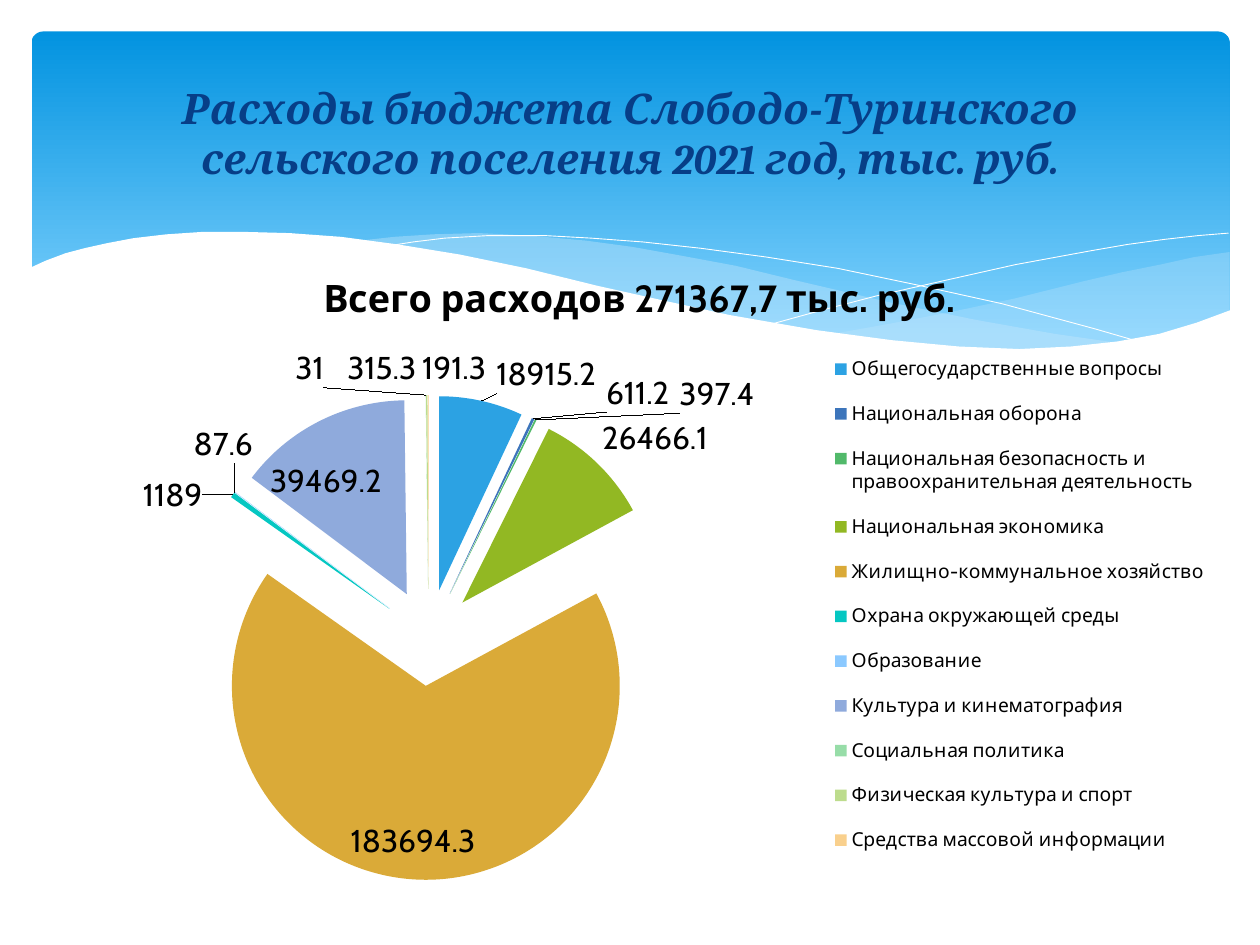
from lxml.etree import SubElement
from pptx import Presentation
from pptx.chart.data import CategoryChartData
from pptx.dml.color import RGBColor
from pptx.enum.chart import XL_CHART_TYPE, XL_LABEL_POSITION, XL_LEGEND_POSITION
from pptx.enum.shapes import MSO_SHAPE
from pptx.enum.text import MSO_ANCHOR, PP_ALIGN
from pptx.oxml import parse_xml
from pptx.oxml.ns import nsdecls, qn
from pptx.util import Inches, Pt

THEME = {
    "white": RGBColor.from_string("FFFFFF"),
    "black": RGBColor.from_string("000000"),
    "title": RGBColor.from_string("073E87"),
    "banner_top": RGBColor.from_string("0293E0"),
    "banner_bottom": RGBColor.from_string("83D3FE"),
    "wave": RGBColor.from_string("C6E7FC"),
    "title_font": "Cambria",
    "chart_font": "Cabin",
    "title_size": Pt(24),
    "chart_title_size": Pt(21.6),
    "label_size": Pt(18),
    "legend_size": Pt(11),
}

# Outline, fill opacity in percent (None for an open white line)
WAVES = [
    ([(9.76, 2), (9.48, 2.04), (9.21, 2.1), (8.91, 2.16), (8.61, 2.23), (8.05, 2.37),
      (7.53, 2.48), (7.06, 2.57), (6.61, 2.65), (6.91, 2.69), (7.19, 2.72), (7.45, 2.75),
      (7.81, 2.77), (8.14, 2.78), (8.44, 2.77), (8.72, 2.74), (8.97, 2.7), (9.21, 2.65),
      (9.49, 2.57), (9.76, 2.47)], 29),
    ([(8.93, 2.73), (8.37, 2.65), (7.75, 2.54), (7.06, 2.4), (6.29, 2.22), (5.84, 2.11),
      (5.41, 2.03), (5.02, 1.96), (4.65, 1.91), (4.2, 1.87), (3.8, 1.85), (3.44, 1.86),
      (3.13, 1.88), (2.86, 1.91), (3.23, 1.96), (3.62, 2.03), (4.04, 2.11), (4.49, 2.22),
      (5.3, 2.4), (6.01, 2.55), (6.5, 2.64), (6.95, 2.7), (7.36, 2.75), (7.73, 2.77),
      (8.18, 2.78), (8.57, 2.77)], 40),
    ([(3.09, 1.95), (3.28, 1.92), (3.53, 1.89), (3.87, 1.87), (4.33, 1.87), (4.69, 1.89),
      (5.1, 1.92), (5.56, 1.97), (6.08, 2.04), (6.65, 2.13), (7.27, 2.26), (7.95, 2.41),
      (8.69, 2.61), (9.07, 2.72)], None),
    ([(6.13, 2.57), (6.53, 2.46), (6.95, 2.35), (7.48, 2.23), (8.06, 2.1), (8.66, 1.99),
      (8.95, 1.94), (9.24, 1.9), (9.51, 1.87), (9.75, 1.85)], None),
    ([(9.77, 2.46), (9.5, 2.56), (9.2, 2.65), (8.87, 2.71), (8.5, 2.75), (8.09, 2.77),
      (7.61, 2.75), (7.08, 2.7), (6.48, 2.62), (5.79, 2.5), (5.29, 2.39), (4.75, 2.27),
      (4.18, 2.13), (3.65, 2.02), (3.16, 1.94), (2.71, 1.88), (2.3, 1.85), (1.93, 1.84),
      (1.61, 1.84), (1.32, 1.86), (1.06, 1.89), (0.85, 1.93), (0.67, 1.97), (0.52, 2.01),
      (0.36, 2.07), (0.23, 2.13), (0.23, 3.29), (9.77, 3.29)], 100),
]

# Category, value, slice colour
EXPENSES = [
    ("Общегосударственные вопросы", 18915.2, "2CA2E3"),
    ("Национальная оборона", 611.2, "3D75BB"),
    ("Национальная безопасность и правоохранительная деятельность", 397.4, "51B96A"),
    ("Национальная экономика", 26466.1, "92B823"),
    ("Жилищно-коммунальное хозяйство", 183694.3, "DAAA38"),
    ("Охрана окружающей среды", 1189, "05C7C2"),
    ("Образование", 87.6, "8BC9FF"),
    ("Культура и кинематография", 39469.2, "8FAADC"),
    ("Социальная политика", 31, "97DDA8"),
    ("Физическая культура и спорт", 315.3, "BDDC8D"),
    ("Средства массовой информации", 191.3, "F9D08D"),
]


def set_font(font, size, name=THEME["chart_font"], color=THEME["black"], bold=False):
    font.size, font.name, font.bold = size, name, bold
    font.color.rgb = color


def set_layout(parent, inner=False, **fractions):
    """Place a chart part by hand, in fractions of the chart's size."""
    for old in parent.findall(qn("c:layout")):
        parent.remove(old)
    layout = parse_xml(f"<c:layout {nsdecls('c')}/>")
    manual = SubElement(layout, qn("c:manualLayout"))
    if inner:
        SubElement(manual, qn("c:layoutTarget"), val="inner")
    if "w" in fractions:
        SubElement(manual, qn("c:xMode"), val="edge")
        SubElement(manual, qn("c:yMode"), val="edge")
    for key, value in fractions.items():
        SubElement(manual, qn(f"c:{key}"), val=str(value))
    anchor = parent.find(qn("c:legendPos"))
    if anchor is None:
        anchor = parent.find(qn("c:idx"))
    if anchor is None:
        parent.insert(0, layout)
    else:
        anchor.addnext(layout)


presentation = Presentation()
presentation.slide_width, presentation.slide_height = Inches(10), Inches(7.5)
slide = presentation.slides.add_slide(presentation.slide_layouts[5])
shapes = slide.shapes

# Banner with waves
banner = shapes.add_shape(MSO_SHAPE.ROUNDED_RECTANGLE,
                          Inches(0.25), Inches(0.25), Inches(9.51), Inches(2.7))
banner.adjustments[0] = 0.034
banner.shadow.inherit = False
banner.line.fill.background()
banner.fill.gradient()
banner.fill.gradient_angle = 270
stops = zip(banner.fill.gradient_stops, (0, 0.9), (THEME["banner_top"], THEME["banner_bottom"]))
for stop, position, color in stops:
    stop.position, stop.color.rgb = position, color

for points, opacity in WAVES:
    corners = [(Inches(x), Inches(y)) for x, y in points]
    builder = shapes.build_freeform(*corners[0])
    builder.add_line_segments(corners[1:], close=opacity is not None)
    wave = builder.convert_to_shape()
    wave.shadow.inherit = False
    if opacity is None:
        wave.fill.background()
        wave.line.color.rgb = THEME["white"]
        wave.line.width = Pt(0.5)
        continue
    wave.line.fill.background()
    wave.fill.solid()
    wave.fill.fore_color.rgb = THEME["white"] if opacity == 100 else THEME["wave"]
    color_element = wave.fill._xPr.find(f".//{qn('a:srgbClr')}")
    SubElement(color_element, qn("a:alpha"), val=str(opacity * 1000))

# Pie chart of expenses
chart_title = "Всего расходов 271367,7 тыс. руб."
chart_data = CategoryChartData()
chart_data.categories = [name for name, _, _ in EXPENSES]
chart_data.add_series(chart_title, [value for _, value, _ in EXPENSES])
chart = shapes.add_chart(XL_CHART_TYPE.PIE, Inches(0.43), Inches(1.94),
                         Inches(9.29), Inches(5.2), chart_data).chart
set_font(chart.font, THEME["label_size"])
chart.has_title = True
title_run = chart.chart_title.text_frame.paragraphs[0].add_run()
title_run.text = chart_title
set_font(title_run.font, THEME["chart_title_size"], bold=True)

chart.has_legend = True
chart.legend.position = XL_LEGEND_POSITION.RIGHT
chart.legend.include_in_layout = False
set_font(chart.legend.font, THEME["legend_size"])
set_layout(chart.legend._element, x=0.66, y=0.14, w=0.33, h=0.82)
set_layout(chart._chartSpace.chart.plotArea, inner=True, x=0.11, y=0.23, w=0.42, h=0.74)

plot = chart.plots[0]
plot.vary_by_categories = True
series = plot.series[0]
for index, (_, _, color) in enumerate(EXPENSES):
    fill = series.points[index].format.fill
    fill.solid()
    fill.fore_color.rgb = RGBColor.from_string(color)
explosion = parse_xml(f'<c:explosion {nsdecls("c")} val="25"/>')
series._element.find(qn("c:dPt")).addprevious(explosion)
labels = series.data_labels
labels.show_value = True
labels.position = XL_LABEL_POSITION.BEST_FIT
set_font(labels.font, THEME["label_size"])

# Title above the banner
title = shapes.title
title.left, title.top, title.width, title.height = Inches(0.5), Inches(0.37), Inches(9), Inches(1.37)
title.text_frame.vertical_anchor = MSO_ANCHOR.MIDDLE
paragraph = title.text_frame.paragraphs[0]
paragraph.alignment = PP_ALIGN.CENTER
run = paragraph.add_run()
run.text = "Расходы бюджета Слободо-Туринского сельского поселения 2021 год, тыс. руб."
set_font(run.font, THEME["title_size"], THEME["title_font"], THEME["title"], bold=True)
run.font.italic = True
shapes._spTree.append(title._element)

presentation.save("out.pptx")
